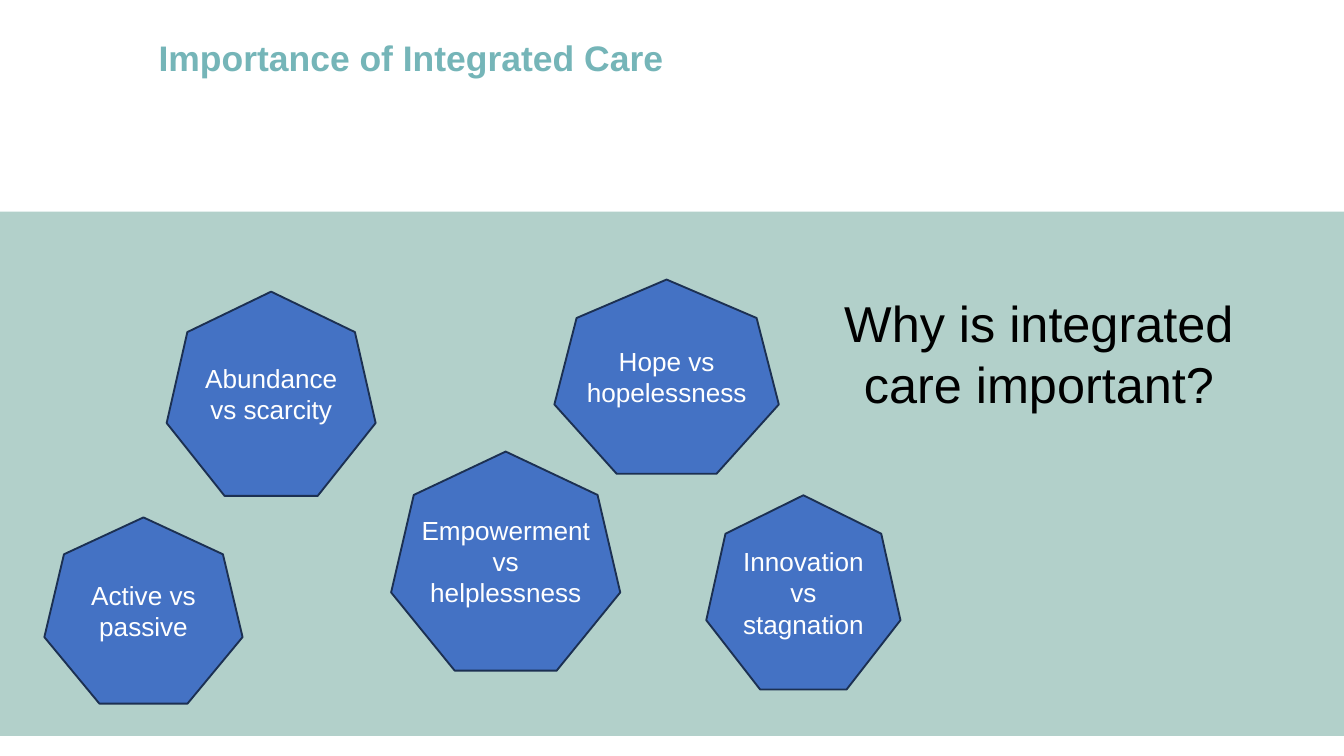
"""Build the "Importance of Integrated Care" slide."""
import pptx
import pptx.util
from pptx.dml.color import RGBColor
from pptx.enum.shapes import MSO_SHAPE
from pptx.enum.text import MSO_ANCHOR, PP_ALIGN
from pptx.util import Inches

FONT = "Arial"
WHITE = RGBColor(0xFF, 0xFF, 0xFF)
BLACK = RGBColor(0x00, 0x00, 0x00)
TEAL = RGBColor(0x75, 0xB5, 0xB8)
SAGE = RGBColor(0xB2, 0xD0, 0xCA)
BLUE = RGBColor(0x44, 0x72, 0xC4)
NAVY = RGBColor(0x1C, 0x30, 0x52)

CONTRASTS = [
    ("Hope vs hopelessness", 8.25, 4.16, 3.34, 2.89),
    ("Abundance vs scarcity", 2.48, 4.34, 3.11, 3.04),
    ("Empowerment vs helplessness", 5.82, 6.72, 3.41, 3.26),
    ("Active vs passive", 0.66, 7.7, 2.95, 2.77),
    ("Innovation vs stagnation", 10.51, 7.37, 2.89, 2.89),
]


def write_text(sp, text, size, color, align, bold=False):
    tf = sp.text_frame
    tf.word_wrap = True
    p = tf.paragraphs[0]
    p.text = text
    p.alignment = align
    font = p.runs[0].font
    font.name = FONT
    font.size = pptx.util.Pt(size)
    font.bold = bold
    font.color.rgb = color
    return p


def add_filled(s, kind, box, color):
    sp = s.shapes.add_shape(kind, *map(Inches, box))
    sp.shadow.inherit = False
    sp.fill.solid()
    sp.fill.fore_color.rgb = color
    sp.line.fill.background()
    return sp


def add_heptagon(s, text, box):
    sp = add_filled(s, MSO_SHAPE.HEPTAGON, box, BLUE)
    sp.line.color.rgb = NAVY
    sp.line.width = pptx.util.Pt(2)
    sp.text_frame.vertical_anchor = MSO_ANCHOR.MIDDLE
    write_text(sp, text, 28, WHITE, PP_ALIGN.CENTER)


def add_text(s, text, box, size, color, align, bold=False):
    sp = s.shapes.add_textbox(*map(Inches, box))
    tf = sp.text_frame
    tf.margin_left = tf.margin_top = tf.margin_right = tf.margin_bottom = 0
    return write_text(sp, text, size, color, align, bold)


def main():
    prs = pptx.Presentation()
    prs.slide_width, prs.slide_height = Inches(20), Inches(11.25)
    s = prs.slides.add_slide(prs.slide_layouts[6])

    add_filled(s, MSO_SHAPE.RECTANGLE, (0, 3.15, 20, 7.8), SAGE)
    add_text(s, "Why is integrated care important?", (11.94, 4.35, 7.04, 1.82),
             54, BLACK, PP_ALIGN.CENTER)
    for text, *box in CONTRASTS:
        add_heptagon(s, text, box)
    title = add_text(s, "Importance of Integrated Care", (2.36, 0.61, 8.5, 1.78),
                     38, TEAL, PP_ALIGN.LEFT, bold=True)
    title.line_spacing = 0.9

    prs.save("out.pptx")


if __name__ == "__main__":
    main()
